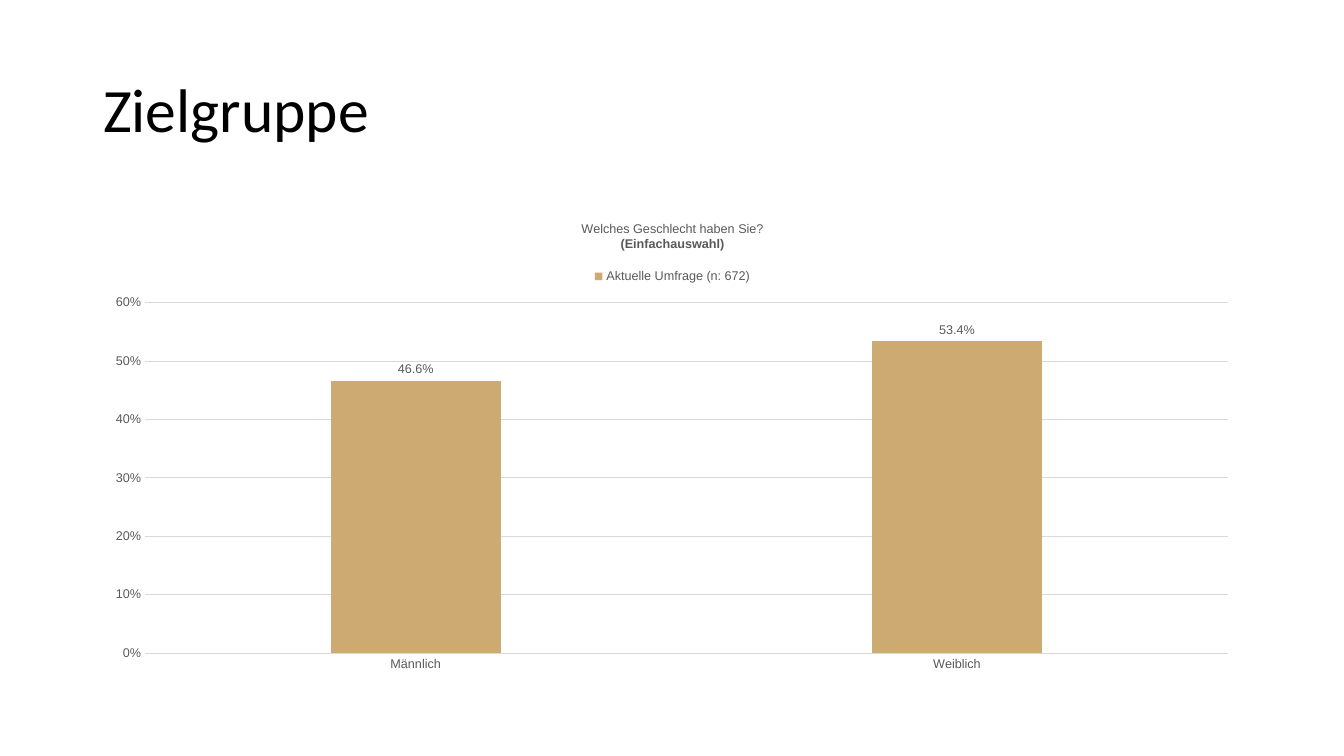
from pptx import Presentation
from pptx.chart.data import CategoryChartData
from pptx.dml.color import RGBColor
from pptx.enum.chart import XL_CHART_TYPE, XL_LABEL_POSITION, XL_LEGEND_POSITION, XL_TICK_MARK
from pptx.enum.text import MSO_ANCHOR, PP_ALIGN
from pptx.oxml import parse_xml
from pptx.oxml.ns import nsdecls, qn
from pptx.util import Pt

EMU_PER_PX = 914400 / 100.8
BLACK = RGBColor(0x00, 0x00, 0x00)
WHITE = RGBColor(0xFF, 0xFF, 0xFF)
GREY = RGBColor(0x59, 0x59, 0x59)
GRID = RGBColor(0xD9, 0xD9, 0xD9)
GOLD = RGBColor(0xCC, 0xAA, 0x72)


def px(n):
    return round(n * EMU_PER_PX)


def style_font(font, size=9, color=GREY, name="Arial", bold=False):
    font.size, font.name, font.bold = Pt(size), name, bold
    font.color.rgb = color


def style_line(line):
    line.color.rgb = GRID
    line.width = Pt(0.75)


def add_title(s, text):
    sp = s.shapes.title
    sp.left, sp.top, sp.width, sp.height = px(93), px(40), px(1159), px(146)
    tf = sp.text_frame
    tf.word_wrap = True
    tf.vertical_anchor = MSO_ANCHOR.MIDDLE
    p = tf.paragraphs[0]
    p.alignment = PP_ALIGN.LEFT
    p.line_spacing = 0.9
    r = p.add_run()
    r.text = text
    style_font(r.font, 44, BLACK, "Calibri")


def set_layout(parent, index, x, y, w, h, inner=False):
    """Place a chart part by fractions of the chart area."""
    for old in parent.findall(qn("c:layout")):
        parent.remove(old)
    target = '<c:layoutTarget val="inner"/>' if inner else ""
    parent.insert(index, parse_xml(
        f'<c:layout {nsdecls("c")}><c:manualLayout>{target}'
        '<c:xMode val="edge"/><c:yMode val="edge"/>'
        f'<c:x val="{x}"/><c:y val="{y}"/><c:w val="{w}"/><c:h val="{h}"/>'
        '</c:manualLayout></c:layout>'))


def add_chart_title(chart, lines):
    chart.has_title = True
    chart.chart_title.include_in_layout = False
    tf = chart.chart_title.text_frame
    for i, (text, bold) in enumerate(lines):
        p = tf.add_paragraph() if i else tf.paragraphs[0]
        r = p.add_run()
        r.text = text
        style_font(r.font, bold=bold)


def style_axes(chart):
    for axis in (chart.category_axis, chart.value_axis):
        axis.major_tick_mark = axis.minor_tick_mark = XL_TICK_MARK.NONE
        style_font(axis.tick_labels.font)
    style_line(chart.category_axis.format.line)
    values = chart.value_axis
    values.format.line.fill.background()
    values.minimum_scale, values.maximum_scale, values.major_unit = 0, 0.6, 0.1
    values.tick_labels.number_format = "0%"
    values.tick_labels.number_format_is_linked = False
    values.has_major_gridlines = True
    style_line(values.major_gridlines.format.line)


def add_legend(chart):
    chart.has_legend = True
    legend = chart.legend
    legend.position = XL_LEGEND_POSITION.TOP
    legend.include_in_layout = False
    style_font(legend.font)
    set_layout(legend._element, 1, 0.43, 0.13, 0.14, 0.05)


def add_column_chart(s, categories, name, values):
    data = CategoryChartData(number_format="0.0%")
    data.categories = categories
    data.add_series(name, values)
    chart = s.shapes.add_chart(XL_CHART_TYPE.COLUMN_CLUSTERED,
                               px(93), px(202), px(1159), px(480), data).chart
    style_font(chart.font, 10, BLACK, "Calibri")
    style_axes(chart)
    add_legend(chart)
    set_layout(chart._chartSpace.chart.plotArea, 0, 0.045, 0.21, 0.934, 0.73, inner=True)

    # Columns and their labels
    plot = chart.plots[0]
    plot.gap_width, plot.overlap, plot.vary_by_categories = 219, -27, False
    series = plot.series[0]
    series.format.fill.solid()
    series.format.fill.fore_color.rgb = GOLD
    labels = series.data_labels
    labels.show_value = True
    labels.position = XL_LABEL_POSITION.OUTSIDE_END
    labels.number_format, labels.number_format_is_linked = "0.0%", False
    style_font(labels.font)
    return chart


def main():
    prs = Presentation()
    prs.slide_width, prs.slide_height = px(1344), px(756)
    s = prs.slides.add_slide(prs.slide_layouts[5])
    s.background.fill.solid()
    s.background.fill.fore_color.rgb = WHITE

    add_title(s, "Zielgruppe")
    chart = add_column_chart(s, ["Männlich", "Weiblich"],
                             "Aktuelle Umfrage (n: 672)", [0.466, 0.534])
    add_chart_title(chart, [("Welches Geschlecht haben Sie?", False),
                            ("(Einfachauswahl)", True)])
    prs.save("out.pptx")


if __name__ == "__main__":
    main()
